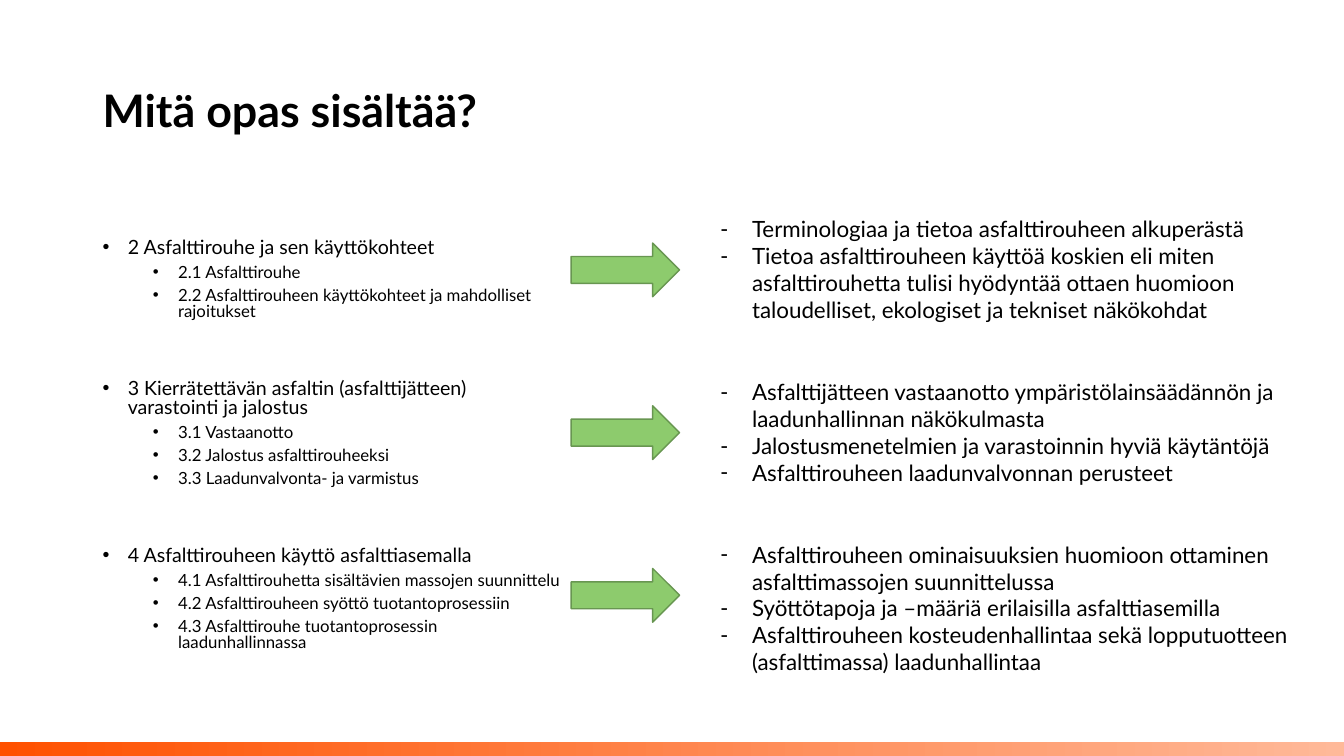
from dataclasses import dataclass
from typing import Any

import lxml.etree
import pptx
import pptx.dml.color
import pptx.enum.shapes
import pptx.enum.text
import pptx.oxml.ns
import pptx.util

Pt = pptx.util.Pt
MSO_SHAPE = pptx.enum.shapes.MSO_SHAPE
MSO_ANCHOR = pptx.enum.text.MSO_ANCHOR
FONT = "Lato"


@dataclass(frozen=True)
class Style:
    size: float
    bold: bool = False
    bullet: str = ""
    indent: float = 0
    hanging: float = 0
    line_spacing: float = 1.0
    space_before: float = 0


@dataclass(frozen=True)
class Topic:
    chapter: str
    sections: list[str]
    contents: list[str]
    contents_height: float


TITLE = Style(32, bold=True, line_spacing=0.9)
CHAPTER = Style(14, bullet="•", indent=18, hanging=18, line_spacing=0.8, space_before=43)
SECTION = Style(12, bullet="•", indent=54, hanging=18, line_spacing=0.8, space_before=5)
CONTENT = Style(16, bullet="-", indent=22.5, hanging=22.5)

TOPICS = [
    Topic(
        "2 Asfalttirouhe ja sen käyttökohteet",
        ["2.1 Asfalttirouhe",
         "2.2 Asfalttirouheen käyttökohteet ja mahdolliset rajoitukset"],
        ["Terminologiaa ja tietoa asfalttirouheen alkuperästä",
         "Tietoa asfalttirouheen käyttöä koskien eli miten asfalttirouhetta tulisi "
         "hyödyntää ottaen huomioon taloudelliset, ekologiset ja tekniset näkökohdat"],
        85,
    ),
    Topic(
        "3 Kierrätettävän asfaltin (asfalttijätteen) varastointi ja jalostus",
        ["3.1 Vastaanotto",
         "3.2 Jalostus asfalttirouheeksi",
         "3.3 Laadunvalvonta- ja varmistus"],
        ["Asfalttijätteen vastaanotto ympäristölainsäädännön ja laadunhallinnan näkökulmasta",
         "Jalostusmenetelmien ja varastoinnin hyviä käytäntöjä",
         "Asfalttirouheen laadunvalvonnan perusteet"],
        85,
    ),
    Topic(
        "4 Asfalttirouheen käyttö asfalttiasemalla",
        ["4.1 Asfalttirouhetta sisältävien massojen suunnittelu",
         "4.2 Asfalttirouheen syöttö tuotantoprosessiin",
         "4.3 Asfalttirouhe tuotantoprosessin laadunhallinnassa"],
        ["Asfalttirouheen ominaisuuksien huomioon ottaminen asfalttimassojen suunnittelussa",
         "Syöttötapoja ja –määriä erilaisilla asfalttiasemilla",
         "Asfalttirouheen kosteudenhallintaa sekä lopputuotteen (asfalttimassa) laadunhallintaa"],
        104.4,
    ),
]


def color(value: str) -> pptx.dml.color.RGBColor:
    return pptx.dml.color.RGBColor.from_string(value)


def apply(target: Any, values: dict[str, Any]) -> None:
    for name, value in values.items():
        setattr(target, name, value)


def add_bullet(paragraph: Any, style: Style) -> None:
    properties = paragraph._p.get_or_add_pPr()
    properties.set("marL", str(Pt(style.indent)))
    properties.set("indent", str(-Pt(style.hanging)))
    for tag, key, value in (("a:buFont", "typeface", "Arial"), ("a:buChar", "char", style.bullet)):
        lxml.etree.SubElement(properties, pptx.oxml.ns.qn(tag)).set(key, value)


def add_text(slide: Any, box: tuple[float, float, float, float],
             lines: list[tuple[str, Style]], anchor: Any = MSO_ANCHOR.TOP) -> None:
    frame = slide.shapes.add_textbox(*map(Pt, box)).text_frame
    apply(frame, {"word_wrap": True, "vertical_anchor": anchor})
    for index, (text, style) in enumerate(lines):
        paragraph = frame.add_paragraph() if index else frame.paragraphs[0]
        if style.bullet:
            add_bullet(paragraph, style)
        apply(paragraph, {
            "line_spacing": style.line_spacing,
            "space_before": Pt(style.space_before if index else 0),
        })
        run = paragraph.add_run()
        run.text = text
        apply(run.font, {"name": FONT, "size": Pt(style.size), "bold": style.bold})
        run.font.color.rgb = color("000000")


def add_footer_band(slide: Any) -> None:
    band = slide.shapes.add_shape(MSO_SHAPE.RECTANGLE, Pt(0), Pt(530), Pt(960), Pt(10))
    band.shadow.inherit = False
    band.line.fill.background()
    band.fill.gradient()
    band.fill.gradient_angle = 0
    for stop, position, shade in zip(band.fill.gradient_stops, (0, 1), ("FF5100", "FFB999")):
        stop.position = position
        stop.color.rgb = color(shade)


def add_arrow(slide: Any, top: float) -> None:
    arrow = slide.shapes.add_shape(MSO_SHAPE.RIGHT_ARROW, Pt(408), Pt(top), Pt(77.4), Pt(38.4))
    arrow.shadow.inherit = False
    arrow.fill.solid()
    arrow.fill.fore_color.rgb = color("8DCB6D")
    arrow.line.color.rgb = color("689651")
    arrow.line.width = Pt(1)


def main() -> None:
    presentation = pptx.Presentation()
    apply(presentation, {"slide_width": Pt(960), "slide_height": Pt(540)})
    slide = presentation.slides.add_slide(presentation.slide_layouts[6])

    add_footer_band(slide)
    add_text(slide, (66.2, 28.8, 775.4, 104.4), [("Mitä opas sisältää?", TITLE)], MSO_ANCHOR.MIDDLE)

    # Table of contents on the left
    outline = [
        line
        for topic in TOPICS
        for line in [(topic.chapter, CHAPTER), *((section, SECTION) for section in topic.sections)]
    ]
    add_text(slide, (66.2, 167.5, 342, 319), outline)

    # An arrow and a description for each chapter
    row_pitch = 116.2
    for row, topic in enumerate(TOPICS):
        offset = row * row_pitch
        add_arrow(slide, 173.6 + offset)
        add_text(slide, (507.6, 150.4 + offset, 433.4, topic.contents_height),
                 [(content, CONTENT) for content in topic.contents])

    presentation.save("out.pptx")


if __name__ == "__main__":
    main()
